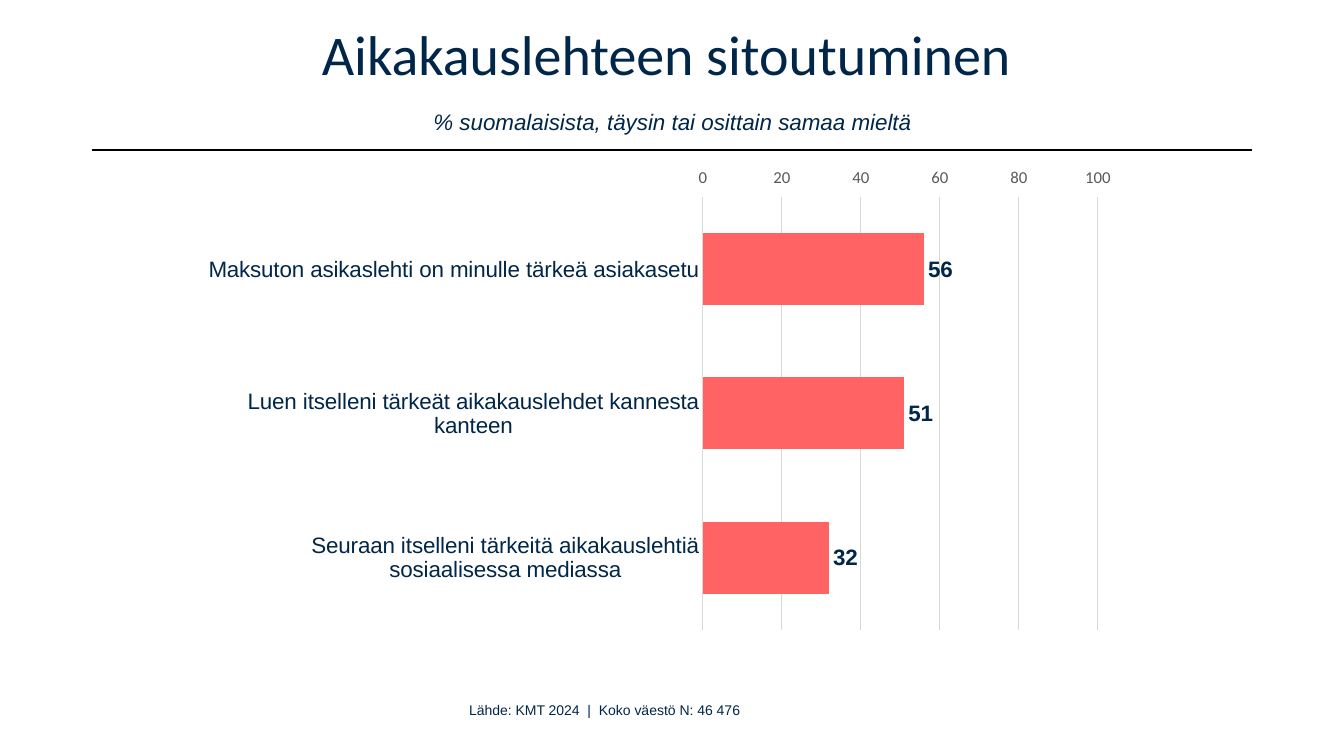
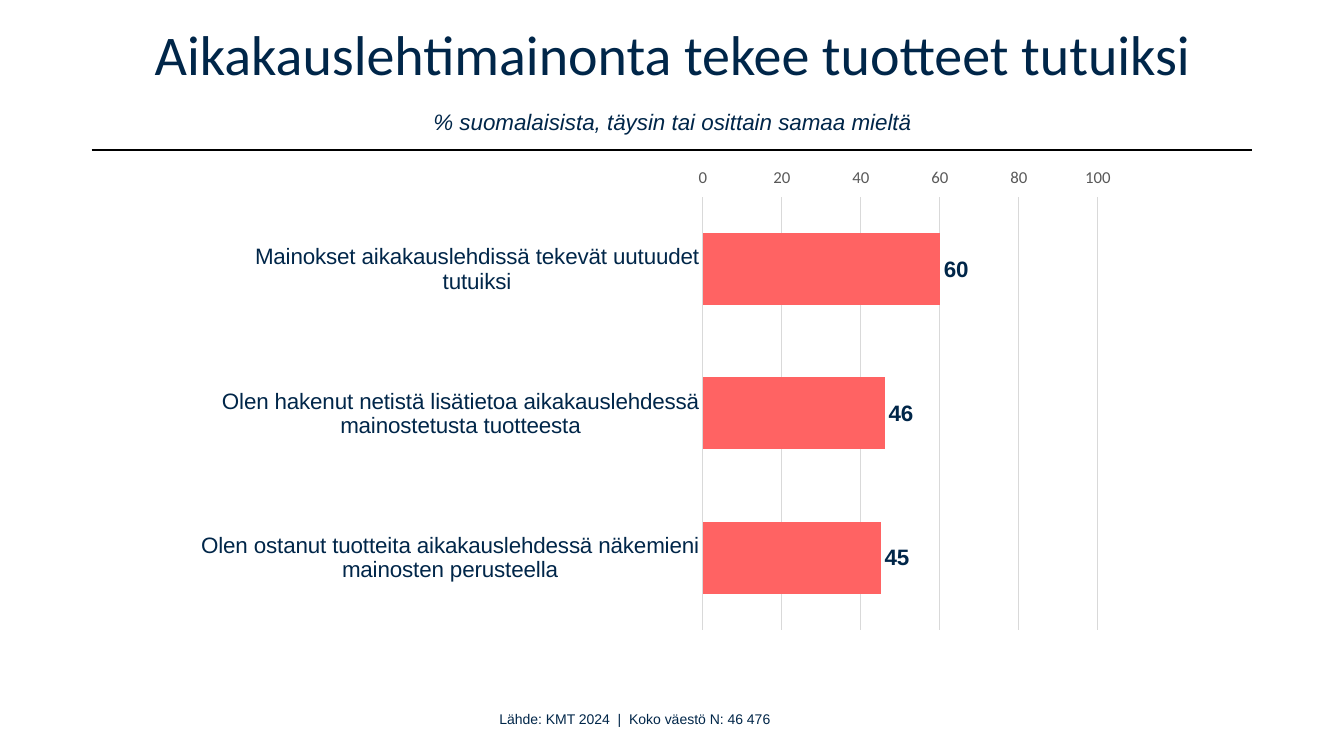
from dataclasses import dataclass

from pptx import Presentation
from pptx.chart.chart import Chart
from pptx.chart.data import CategoryChartData
from pptx.dml.color import RGBColor
from pptx.enum import chart as charts, shapes, text
from pptx.oxml import ns, parse_xml
from pptx.slide import Slide
from pptx.util import Inches, Pt


@dataclass(frozen=True)
class Theme:
    navy: str = "002649"
    coral: str = "FF6363"
    black: str = "000000"
    grey_text: str = "595959"
    grey_line: str = "D9D9D9"
    heading_font: str = "Calibri"
    body_font: str = "Arial"
    title_size: int = 40
    label_size: int = 16
    axis_size: int = 12
    source_size: int = 10
    grid_width: float = 0.75


@dataclass(frozen=True)
class Statement:
    label: str
    percent: int


@dataclass(frozen=True)
class SurveySlide:
    title: str
    statements: tuple[Statement, ...]  # from the bottom bar up
    source_left: float
    source_top: float


THEME = Theme()
SUBTITLE = "% suomalaisista, täysin tai osittain samaa mieltä"
SOURCE = "Lähde: KMT 2024  |  Koko väestö N: 46 476 "
PLOT_LAYOUT = {"x": 0.532, "y": 0.055, "w": 0.416, "h": 0.866}

SLIDES = (
    SurveySlide(
        "Aikakauslehteen sitoutuminen ",
        (
            Statement("Seuraan itselleni tärkeitä aikakauslehtiä sosiaalisessa mediassa", 32),
            Statement("Luen itselleni tärkeät aikakauslehdet kannesta kanteen", 51),
            Statement("Maksuton asikaslehti on minulle tärkeä asiakasetu", 56),
        ),
        source_left=4.55,
        source_top=6.91,
    ),
    SurveySlide(
        "Aikakauslehtimainonta tekee tuotteet tutuiksi",
        (
            Statement("Olen ostanut tuotteita aikakauslehdessä näkemieni mainosten perusteella", 45),
            Statement("Olen hakenut netistä lisätietoa aikakauslehdessä mainostetusta tuotteesta", 46),
            Statement("Mainokset aikakauslehdissä tekevät uutuudet tutuiksi", 60),
        ),
        source_left=4.85,
        source_top=7,
    ),
)


# Text
def format_font(font, *, size: float, color: str = THEME.navy, name: str = THEME.body_font,
                bold: bool = False, italic: bool = False) -> None:
    font.size, font.name = Pt(size), name
    font.bold, font.italic = bold, italic
    font.color.rgb = RGBColor.from_string(color)


def add_text(paragraph, words: str, **font_format) -> None:
    paragraph.alignment = text.PP_ALIGN.CENTER
    run = paragraph.add_run()
    run.text = words
    format_font(run.font, **font_format)


def format_line(line, color: str, width: float) -> None:
    line.color.rgb = RGBColor.from_string(color)
    line.width = Pt(width)


# Title, subtitle and the rule below them
def add_heading(slide: Slide, title: str) -> None:
    rule = slide.shapes.add_connector(
        shapes.MSO_CONNECTOR.STRAIGHT, Inches(0.91), Inches(1.49), Inches(12.42), Inches(1.49))
    format_line(rule.line, THEME.black, 1)
    rule.element.spPr.append(parse_xml(f"<a:effectLst {ns.nsdecls('a')}/>"))

    placeholder = slide.shapes.title
    placeholder.left, placeholder.top = Inches(0.92), Inches(0.32)
    placeholder.width, placeholder.height = Inches(11.5), Inches(1.07)
    frame = placeholder.text_frame
    frame.vertical_anchor = text.MSO_ANCHOR.MIDDLE
    frame.auto_size = text.MSO_AUTO_SIZE.NONE
    paragraph = frame.paragraphs[0]
    paragraph.line_spacing, paragraph.space_after = Pt(35), Pt(18)
    add_text(paragraph, title, size=THEME.title_size, name=THEME.heading_font)
    paragraph.add_line_break()
    add_text(paragraph, SUBTITLE, size=THEME.label_size, italic=True)


# Bar chart
def place_plot(chart: Chart) -> None:
    plot_area = chart.element.find(".//" + ns.qn("c:plotArea"))
    for layout in plot_area.findall(ns.qn("c:layout")):
        plot_area.remove(layout)
    edges = '<c:xMode val="edge"/><c:yMode val="edge"/>'
    sizes = "".join(f'<c:{key} val="{value}"/>' for key, value in PLOT_LAYOUT.items())
    plot_area.insert(0, parse_xml(
        f"<c:layout {ns.nsdecls('c')}><c:manualLayout>"
        f'<c:layoutTarget val="inner"/>{edges}{sizes}</c:manualLayout></c:layout>'))


def format_axes(chart: Chart) -> None:
    categories, values = chart.category_axis, chart.value_axis
    for axis in (categories, values):
        axis.major_tick_mark = axis.minor_tick_mark = charts.XL_TICK_MARK.NONE
    categories.has_major_gridlines = False
    format_font(categories.tick_labels.font, size=THEME.label_size)
    format_line(categories.format.line, THEME.grey_line, THEME.grid_width)

    values.minimum_scale, values.maximum_scale, values.major_unit = 0, 100, 20
    values.tick_label_position = charts.XL_TICK_LABEL_POSITION.HIGH
    values.format.line.fill.background()
    values.has_major_gridlines = True
    format_line(values.major_gridlines.format.line, THEME.grey_line, THEME.grid_width)
    format_font(values.tick_labels.font, size=THEME.axis_size,
                color=THEME.grey_text, name=THEME.heading_font)


def add_bar_chart(slide: Slide, statements: tuple[Statement, ...]) -> None:
    data = CategoryChartData()
    data.categories = [statement.label for statement in statements]
    data.add_series("Series 1", [statement.percent for statement in statements])
    chart = slide.shapes.add_chart(
        charts.XL_CHART_TYPE.BAR_CLUSTERED, Inches(1.96), Inches(1.66),
        Inches(9.42), Inches(4.98), data).chart
    chart.has_legend = chart.has_title = False
    format_font(chart.font, size=THEME.axis_size, color=THEME.black, name=THEME.heading_font)
    place_plot(chart)
    format_axes(chart)

    plot = chart.plots[0]
    plot.gap_width, plot.vary_by_categories = 100, False
    series = plot.series[0]
    series.format.fill.solid()
    series.format.fill.fore_color.rgb = RGBColor.from_string(THEME.coral)
    labels = series.data_labels
    labels.show_value = True
    labels.position = charts.XL_LABEL_POSITION.OUTSIDE_END
    labels.number_format, labels.number_format_is_linked = "#,##0", False
    format_font(labels.font, size=THEME.label_size, bold=True)


# Source line
def add_source(slide: Slide, left: float, top: float) -> None:
    box = slide.shapes.add_textbox(Inches(left), Inches(top), Inches(2.89), Inches(0.27))
    box.text_frame.word_wrap = False
    box.text_frame.auto_size = text.MSO_AUTO_SIZE.SHAPE_TO_FIT_TEXT
    add_text(box.text_frame.paragraphs[0], SOURCE, size=THEME.source_size)


def main() -> None:
    presentation = Presentation()
    presentation.slide_width, presentation.slide_height = Inches(13.33), Inches(7.5)
    title_only = presentation.slide_layouts.get_by_name("Title Only")
    for content in SLIDES:
        slide = presentation.slides.add_slide(title_only)
        add_heading(slide, content.title)
        add_bar_chart(slide, content.statements)
        add_source(slide, content.source_left, content.source_top)
    presentation.save("out.pptx")


if __name__ == "__main__":
    main()
